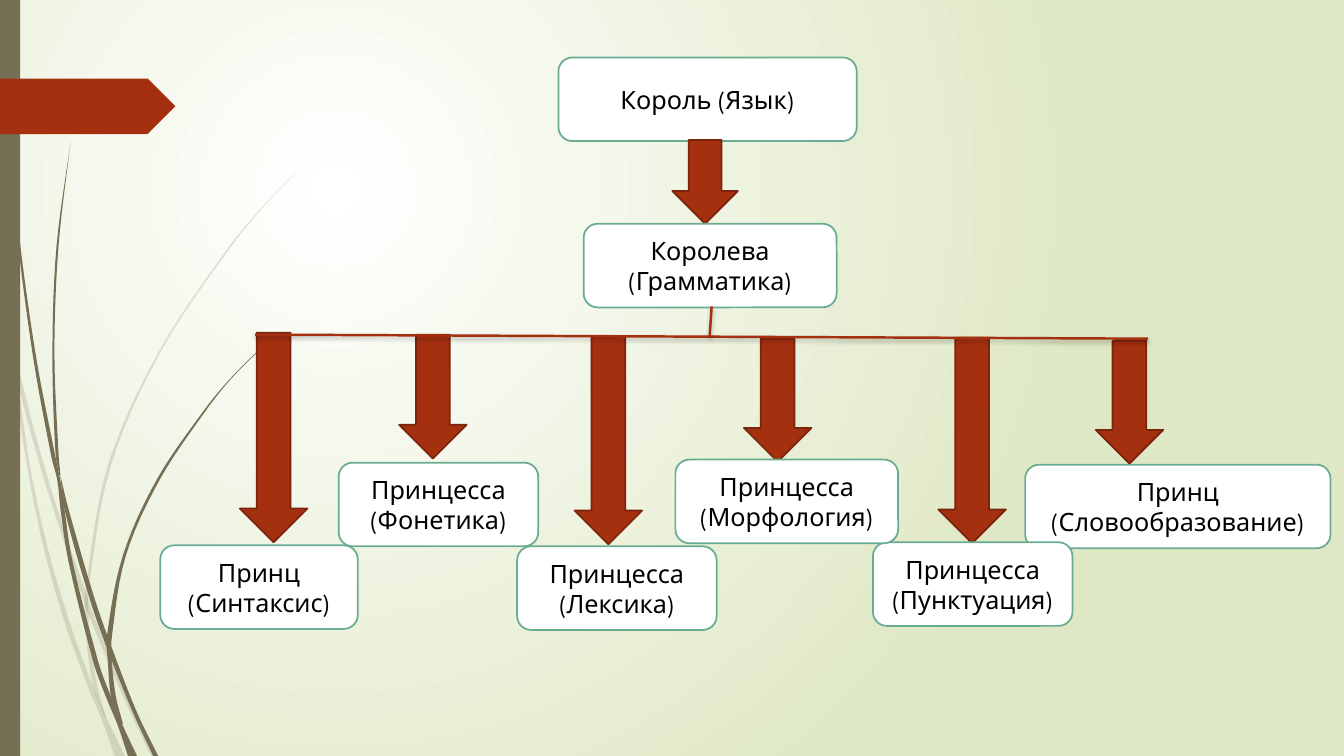
from dataclasses import dataclass

from pptx import Presentation
from pptx.dml.color import RGBColor
from pptx.enum.shapes import MSO_CONNECTOR as LINE, MSO_SHAPE as SHAPE
from pptx.enum.text import MSO_ANCHOR as ANCHOR, PP_ALIGN as ALIGN
from pptx.oxml import parse_xml
from pptx.oxml.ns import nsdecls, qn
from pptx.util import Inches, Pt


@dataclass(frozen=True)
class Theme:
    font: str = "League Spartan"
    size: float = 18
    outline: float = 1.25
    beam: float = 1.75
    ink: str = "000000"
    paper: str = "FFFFFF"
    meadow: str = "DFE8C4"
    border: str = "6AAC91"
    rust: str = "A53010"
    dark_rust: str = "7A240C"
    olive: str = "766F54"


CELL = Inches(0.1)
COLS, ROWS = 133.33, 75
BOX_ROWS = 8.3
ARROW_COLS = 6.7

PALE_STEMS = [
    [(28.2, 0, 0), (30, 0, 0.4), (32.2, 0.5, 0.9), (35, 1.1, 1.2),
     (37.6, 1.4, 1.7), (46.9, 2.8, 3.1), (54.6, 4.4, 4.8), (62, 6.5, 7),
     (68.3, 8.8, 9.3), (71.1, 10, 10.5), (75, 11.4, 12.4)],
    [(34.5, 1.4, 1.4), (37.6, 1.7, 2.1), (44.9, 3.6, 4), (52.1, 5.8, 6.2),
     (59, 8.1, 8.6), (60.8, 8.7, 9.2), (69.3, 12.3, 12.7), (75, 15, 15.5)],
    [(15.3, 31.2, 31.2), (19.8, 26.7, 26.8), (24.5, 22.7, 22.9),
     (34.8, 15.8, 16), (46.2, 10.7, 11), (58.4, 8.5, 8.8), (61, 8.4, 8.8),
     (64.6, 8.7, 9.1), (68.3, 9.3, 9.7), (71.1, 10.4, 10.5)],
]
DARK_STEMS = [
    [(0, 0.3, 0.4), (11, 0.7, 0.8), (23.3, 1.7, 1.9), (35.5, 3.3, 3.6),
     (45.3, 5.1, 5.5), (47.7, 5.7, 6), (50.5, 6, 6.4), (55.7, 6.8, 7.2),
     (65.8, 9.3, 9.8), (69.1, 10.5, 11), (72, 11.7, 12.2), (75, 12.7, 13.6)],
    [(47.2, 6, 6), (50.5, 6.4, 6.8), (59.1, 8.8, 9.3), (64, 10.5, 11),
     (70.7, 13.2, 13.6), (75, 15.2, 15.7)],
    [(14.1, 7, 7), (24.5, 5.6, 5.8), (34.9, 5.2, 5.4), (44.9, 5.5, 5.8),
     (47.2, 5.9, 6)],
    [(34.4, 26, 26.1), (37.4, 23, 23.1), (40.5, 20.4, 20.6),
     (47.5, 15.6, 15.9), (55.1, 12.2, 12.5), (63.2, 10.6, 11.1),
     (65.6, 10.7, 11.1), (69.1, 11, 11.5), (71.8, 11.7, 12.2)],
]
ARROWS = [
    (23.8, 33, 20.8), (108.7, 33.8, 12.2), (57, 33.4, 20.6),
    (73.8, 33.6, 12.2), (93.1, 33.5, 20.4), (39.6, 33.2, 12.3),
]
CHILDREN = [
    (101.7, 46.1, 30.3, "Принц\n(Словообразование)"),
    (86.6, 53.8, 19.8, "Принцесса\n(Пунктуация)"),
    (51.3, 54.2, 19.8, "Принцесса\n(Лексика)"),
    (67, 45.6, 22.1, "Принцесса\n(Морфология)"),
    (15.9, 54.1, 19.6, "Принц\n(Синтаксис)"),
    (33.6, 45.9, 19.8, "Принцесса\n(Фонетика)"),
]


def cells(*values):
    return [round(v * CELL) for v in values]


def rgb(value):
    return RGBColor.from_string(value)


def apply(target, formats):
    for name, value in formats.items():
        setattr(target, name, value)


def smooth_edge(nodes, side, steps=6):
    ys = [node[0] for node in nodes]
    xs = [node[side] for node in nodes]
    last = len(nodes) - 1
    slopes = []
    for i in range(last + 1):
        a, b = max(i - 1, 0), min(i + 1, last)
        slopes.append((xs[b] - xs[a]) / (ys[b] - ys[a]))
    points = []
    for i in range(last):
        span = ys[i + 1] - ys[i]
        for step in range(steps):
            t = step / steps
            ease = t * t * (3 - 2 * t)
            x = (xs[i] + (xs[i + 1] - xs[i]) * ease
                 + span * t * (1 - t) * (slopes[i] * (1 - t) - slopes[i + 1] * t))
            points.append((x, ys[i] + span * t))
    return points + [(xs[last], ys[last])]


class FamilySlide:
    def __init__(self, prs, theme):
        self.theme = theme
        self.s = prs.slides.add_slide(prs.slide_layouts[6])

    def background(self):
        fill = self.s.background.fill
        fill.gradient()
        colors = (self.theme.paper, self.theme.meadow)
        for position, (stop, color) in enumerate(zip(fill.gradient_stops, colors)):
            apply(stop, {"position": position})
            apply(stop.color, {"rgb": rgb(color)})
        grad = self.s.element.find(".//" + qn("a:gradFill"))
        grad.replace(grad.find(qn("a:lin")), parse_xml(
            f'<a:path {nsdecls("a")} path="circle">'
            '<a:fillToRect l="50000" t="50000" r="100000" b="100000"/></a:path>'))

    def paint(self, sp, fill, line=None):
        sp.shadow.inherit = False
        sp.fill.solid()
        sp.fill.fore_color.rgb = rgb(fill)
        if line:
            sp.line.color.rgb = rgb(line)
            sp.line.width = Pt(self.theme.outline)
        else:
            sp.line.fill.background()
        return sp

    def shape(self, kind, x, y, w, h, fill, line=None):
        sp = self.s.shapes.add_shape(kind, *cells(x, y, w, h))
        return self.paint(sp, fill, line)

    def stem(self, nodes, opacity=100):
        outline = smooth_edge(nodes, 1) + smooth_edge(nodes, 2)[::-1]
        points = [cells(*point) for point in outline]
        builder = self.s.shapes.build_freeform(*points[0])
        builder.add_line_segments(points[1:], close=True)
        sp = self.paint(builder.convert_to_shape(), self.theme.olive)
        if opacity < 100:
            color = sp.element.spPr.find(qn("a:solidFill"))[0]
            color.append(parse_xml(
                f'<a:alpha {nsdecls("a")} val="{opacity * 1000}"/>'))

    def box(self, x, y, w, text):
        t = self.theme
        sp = self.shape(SHAPE.ROUNDED_RECTANGLE, x, y, w, BOX_ROWS, t.paper, t.border)
        tf = sp.text_frame
        apply(tf, {"text": text, "word_wrap": True, "vertical_anchor": ANCHOR.MIDDLE})
        for p in tf.paragraphs:
            p.alignment = ALIGN.CENTER
            for r in p.runs:
                apply(r.font, {"name": t.font, "size": Pt(t.size)})
                r.font.color.rgb = rgb(t.ink)

    def arrow(self, x, y, h, w=ARROW_COLS):
        self.shape(SHAPE.DOWN_ARROW, x, y, w, h, self.theme.rust, self.theme.dark_rust)

    def beam(self, x1, y1, x2, y2):
        line = self.s.shapes.add_connector(LINE.STRAIGHT, *cells(x1, y1, x2, y2))
        line.line.color.rgb = rgb(self.theme.rust)
        line.line.width = Pt(self.theme.beam)
        line.element.spPr.append(parse_xml(
            f'<a:effectLst {nsdecls("a")}><a:outerShdw blurRad="{Pt(3)}" '
            f'dist="{Pt(2)}" dir="5400000" rotWithShape="0">'
            f'<a:srgbClr val="{self.theme.ink}"><a:alpha val="25000"/></a:srgbClr>'
            '</a:outerShdw></a:effectLst>'))


def main():
    prs = Presentation()
    prs.slide_width, prs.slide_height = cells(COLS, ROWS)
    theme = Theme()
    family = FamilySlide(prs, theme)
    family.background()
    for nodes in PALE_STEMS:
        family.stem(nodes, opacity=20)
    for nodes in DARK_STEMS:
        family.stem(nodes)
    family.shape(SHAPE.RECTANGLE, 0, 0, 2, ROWS, theme.olive)
    family.shape(SHAPE.PENTAGON, 0, 7.8, 17.4, 5.5, theme.rust)
    family.box(55.4, 5.7, 29.6, "Король (Язык)")
    family.arrow(66.7, 13.9, 8.3, 6.5)
    family.box(57.9, 22.2, 25.1, "Королева (Грамматика)")
    for arrow in ARROWS:
        family.arrow(*arrow)
    for child in CHILDREN:
        family.box(*child)
    family.beam(25.3, 33.2, 113.9, 33.6)
    family.beam(70.6, 30.4, 70.4, 33.4)
    prs.save("out.pptx")


if __name__ == "__main__":
    main()
